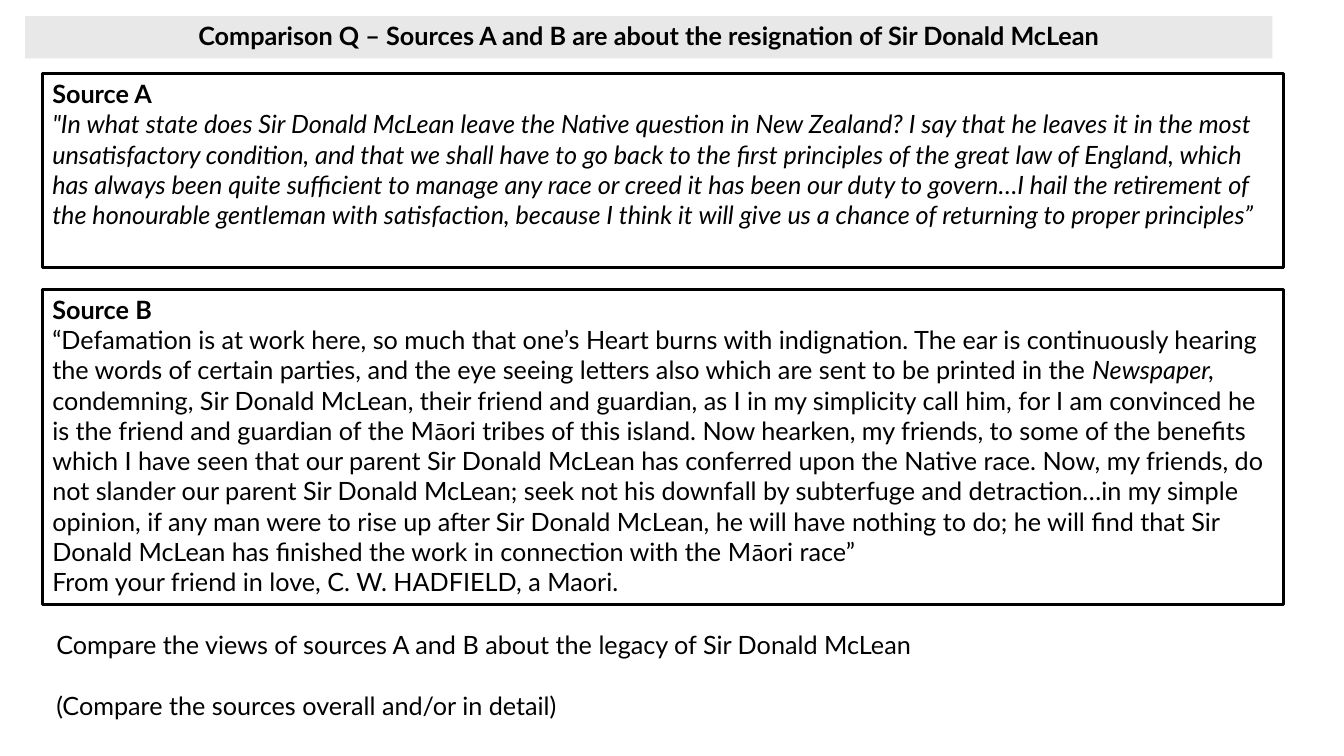
from pptx import Presentation
from pptx.dml.color import RGBColor
from pptx.enum.shapes import MSO_SHAPE
from pptx.enum.text import MSO_ANCHOR, MSO_AUTO_SIZE, PP_ALIGN
from pptx.util import Pt

PX = 9144  # EMU per px, 100 px to the inch
COLOURS = {"text": "000000", "border": "000000", "banner": "E8E8E8"}
FONT, MACRON_FONT = "Lato", "Calibri"
TEXT_SIZE = 18

TITLE = "Comparison Q – Sources A and B are about the resignation of Sir Donald McLean"

# Each source: top, height, paragraphs of (text, style) spans
SOURCES = [
    (73, 192, [
        [("Source A", "bold")],
        [("\"In what state does Sir Donald McLean leave the Native question in New Zealand? "
          "I say that he leaves it in the most unsatisfactory condition, and that we shall "
          "have to go back to the first principles of the great law of England, which has "
          "always been quite sufficient to manage any race or creed it has been our duty to "
          "govern…I hail the retirement of the honourable gentleman with satisfaction, because "
          "I think it will give us a chance of returning to proper principles”", "italic")],
    ]),
    (287, 313, [
        [("Source B", "bold")],
        [("“Defamation is at work here, so much that one’s Heart burns with indignation. The "
          "ear is continuously hearing the words of certain parties, and the eye seeing "
          "letters also which are sent to be printed in the ", "plain"),
         ("Newspaper, ", "italic"),
         ("condemning, Sir Donald McLean, their friend and guardian, as I in my simplicity "
          "call him, for I am convinced he is the friend and guardian of the M", "plain"),
         ("ā", "macron"),
         ("ori tribes of this island. Now hearken, my friends, to some of the benefits which "
          "I have seen that our parent Sir Donald McLean has conferred upon the Native race. "
          "Now, my friends, do not slander our parent Sir Donald McLean; seek not his downfall "
          "by subterfuge and detraction…in my simple opinion, if any man were to rise up after "
          "Sir Donald McLean, he will have nothing to do; he will find that Sir Donald McLean "
          "has finished the work in connection with the M", "plain"),
         ("ā", "macron"),
         ("ori race”", "plain")],
        [("From your friend in love, C. W. HADFIELD, a Maori.", "plain")],
    ]),
]
TASK = [
    [("Compare the views of sources A and B about the legacy of Sir Donald McLean", "plain")],
    [("(Compare the sources overall and/or in detail)", "plain")],
]


def colour(name):
    return RGBColor.from_string(COLOURS[name])


def write(shape, paragraphs, anchor=MSO_ANCHOR.TOP, align=PP_ALIGN.LEFT):
    """Fill a shape with paragraphs of (text, style) spans."""
    frame = shape.text_frame
    frame.word_wrap = True
    frame.auto_size = MSO_AUTO_SIZE.NONE
    frame.vertical_anchor = anchor
    for index, spans in enumerate(paragraphs):
        para = frame.add_paragraph() if index else frame.paragraphs[0]
        para.alignment = align
        for text, style in spans:
            span = para.add_run()
            span.text = text
            span.font.name = MACRON_FONT if style == "macron" else FONT
            span.font.size = Pt(TEXT_SIZE)
            span.font.bold = style == "bold"
            span.font.italic = style == "italic"
            span.font.color.rgb = colour("text")


deck = Presentation()
deck.slide_width, deck.slide_height = 1333 * PX, 750 * PX
page = deck.slides.add_slide(deck.slide_layouts[5])

title = page.shapes.title
title.left, title.top, title.width, title.height = 25 * PX, 16 * PX, 1237 * PX, 42 * PX
title.fill.solid()
title.fill.fore_color.rgb = colour("banner")
write(title, [[(TITLE, "bold")]], MSO_ANCHOR.MIDDLE, PP_ALIGN.CENTER)
title.text_frame.paragraphs[0].line_spacing = 0.9

for top, height, paragraphs in SOURCES:
    box = page.shapes.add_shape(MSO_SHAPE.RECTANGLE, 42 * PX, top * PX, 1231 * PX, height * PX)
    box.shadow.inherit = False
    box.fill.background()
    box.line.color.rgb = colour("border")
    box.line.width = Pt(2.25)
    write(box, paragraphs)

task = page.shapes.add_textbox(46 * PX, 619 * PX, 1225 * PX, 71 * PX)
write(task, TASK)
task.text_frame.paragraphs[1].space_before = Pt(22)

deck.save("out.pptx")
